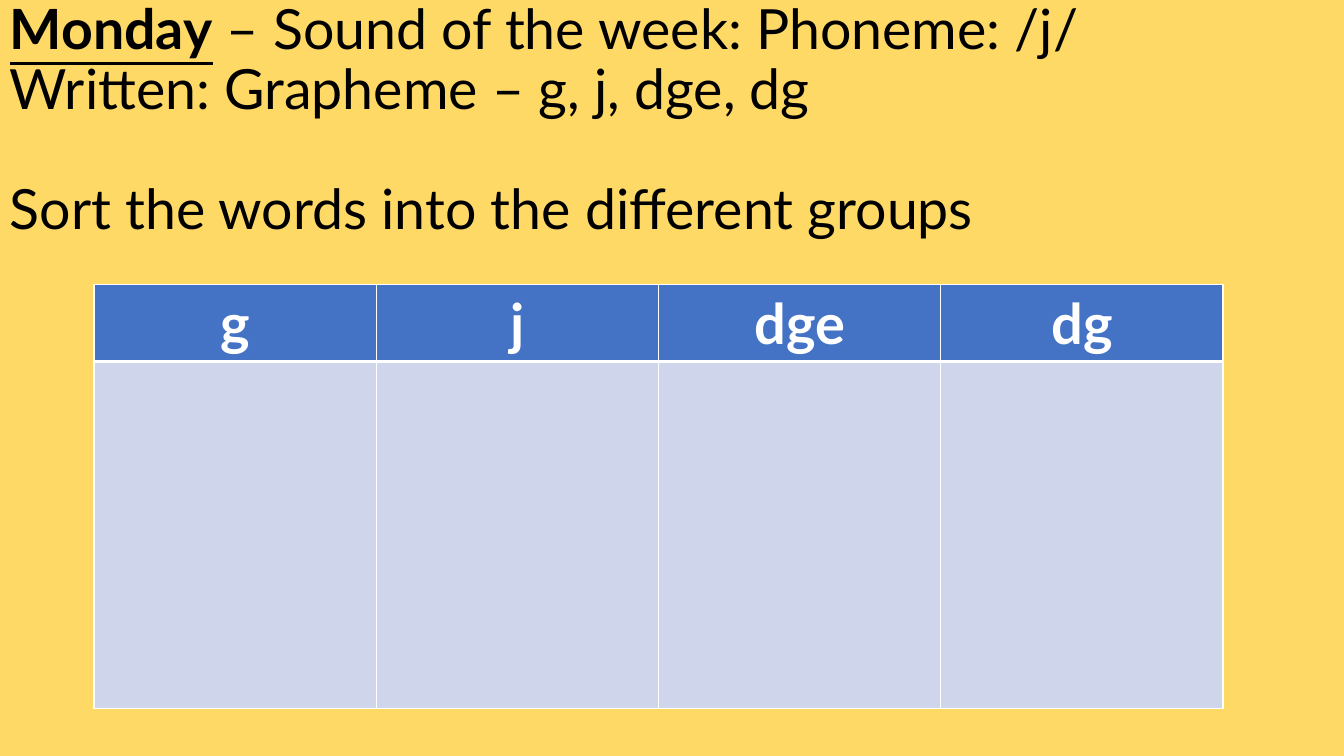
from dataclasses import dataclass
from typing import Any

from lxml.etree import SubElement
from pptx import Presentation
from pptx.dml.color import RGBColor
from pptx.enum.text import MSO_ANCHOR, PP_ALIGN
from pptx.oxml.ns import qn
from pptx.util import Inches, Pt

SLIDE_WIDTH = Inches(13.33)
SLIDE_HEIGHT = Inches(7.5)


@dataclass(frozen=True)
class Theme:
    font: str = "Lato"
    background: str = "FFD966"
    ink: str = "000000"
    header: str = "4472C4"
    body: str = "CFD5EA"
    white: str = "FFFFFF"
    title_size: float = 39.6
    header_size: float = 40
    line_spacing: float = 0.9
    paragraph_gap: float = 43
    thin_border: float = 1
    thick_border: float = 3


@dataclass(frozen=True)
class Area:
    left: float
    top: float
    width: float
    height: float

    def lengths(self) -> tuple[int, int, int, int]:
        return (
            round(SLIDE_WIDTH * self.left / 100),
            round(SLIDE_HEIGHT * self.top / 100),
            round(SLIDE_WIDTH * self.width / 100),
            round(SLIDE_HEIGHT * self.height / 100),
        )


@dataclass(frozen=True)
class TableRow:
    texts: tuple[str, ...]
    height_share: float
    fill: str
    top_border: float
    bottom_border: float


THEME = Theme()
TITLE_AREA = Area(0, 6.4, 86.27, 19.33)
TABLE_AREA = Area(7, 37.6, 84, 56)
GRAPHEMES = ("g", "j", "dge", "dg")
ROWS = (
    TableRow(GRAPHEMES, 0.18, THEME.header, THEME.thin_border, THEME.thick_border),
    TableRow(("",) * len(GRAPHEMES), 0.82, THEME.body, THEME.thick_border, THEME.thin_border),
)


def add_text(para: Any, text: str, *, size: float, color: str,
             bold: bool = False, underline: bool = False) -> None:
    span = para.add_run()
    span.text = text
    span.font.name = THEME.font
    span.font.size = Pt(size)
    span.font.bold = bold
    span.font.underline = underline
    span.font.color.rgb = RGBColor.from_string(color)


def add_border(cell: Any, side: str, width: float) -> None:
    line = SubElement(cell._tc.get_or_add_tcPr(), qn(f"a:{side}"), w=str(Pt(width)))
    fill = SubElement(line, qn("a:solidFill"))
    SubElement(fill, qn("a:srgbClr"), val=THEME.white)


def draw_title(page: Any) -> None:
    box = page.shapes.add_textbox(*TITLE_AREA.lengths())
    frame = box.text_frame
    frame.word_wrap = True
    frame.vertical_anchor = MSO_ANCHOR.MIDDLE
    sound, task = frame.paragraphs[0], frame.add_paragraph()
    sound.line_spacing = task.line_spacing = THEME.line_spacing
    task.space_before = Pt(THEME.paragraph_gap)
    style = {"size": THEME.title_size, "color": THEME.ink}
    add_text(sound, "Monday", bold=True, underline=True, **style)
    add_text(sound, " – Sound of the week: Phoneme: /j/ Written: Grapheme – g, j, dge, dg", **style)
    add_text(task, "Sort the words into the different groups", **style)


def draw_cell(cell: Any, text: str, row: TableRow) -> None:
    add_border(cell, "lnL", THEME.thin_border)
    add_border(cell, "lnR", THEME.thin_border)
    add_border(cell, "lnT", row.top_border)
    add_border(cell, "lnB", row.bottom_border)
    cell.fill.solid()
    cell.fill.fore_color.rgb = RGBColor.from_string(row.fill)
    if text:
        para = cell.text_frame.paragraphs[0]
        para.alignment = PP_ALIGN.CENTER
        add_text(para, text, size=THEME.header_size, color=THEME.white, bold=True)


def draw_table(page: Any) -> None:
    left, top, width, height = TABLE_AREA.lengths()
    table = page.shapes.add_table(len(ROWS), len(GRAPHEMES), left, top, width, height).table
    for row_index, row in enumerate(ROWS):
        table.rows[row_index].height = round(height * row.height_share)
        for column_index, text in enumerate(row.texts):
            draw_cell(table.cell(row_index, column_index), text, row)


def main() -> None:
    deck = Presentation()
    deck.slide_width = SLIDE_WIDTH
    deck.slide_height = SLIDE_HEIGHT
    page = deck.slides.add_slide(deck.slide_layouts[6])
    page.background.fill.solid()
    page.background.fill.fore_color.rgb = RGBColor.from_string(THEME.background)
    draw_title(page)
    draw_table(page)
    deck.save("out.pptx")


if __name__ == "__main__":
    main()
